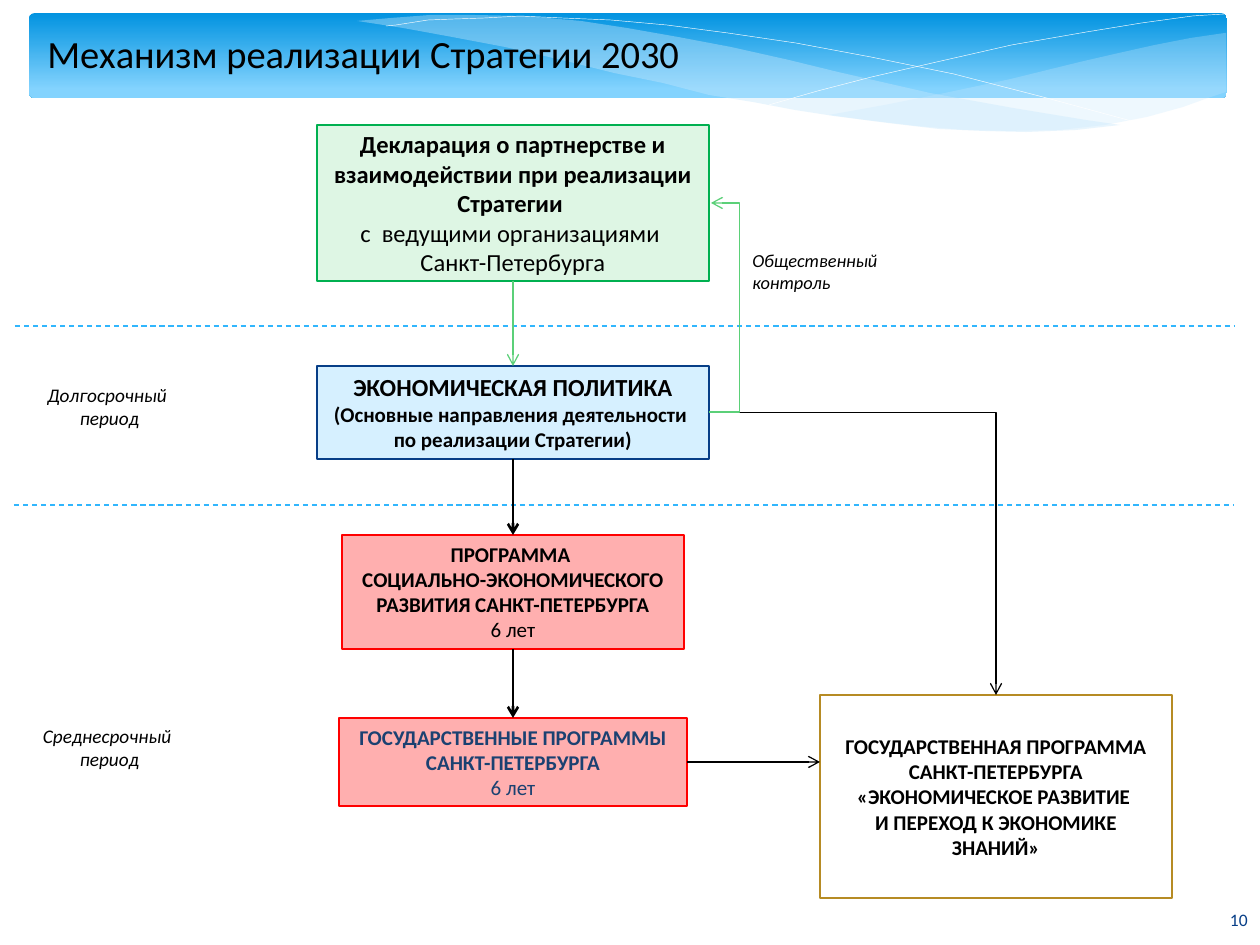
from lxml import etree
from pptx import Presentation
from pptx.dml.color import RGBColor
from pptx.enum.dml import MSO_LINE
from pptx.enum.shapes import MSO_CONNECTOR, MSO_SHAPE
from pptx.enum.text import MSO_ANCHOR, PP_ALIGN
from pptx.oxml.ns import qn
from pptx.util import Emu, Pt

SCALE = 914400 / 126
FONT = "Calibri"
RECT, ROUNDED = MSO_SHAPE.RECTANGLE, MSO_SHAPE.ROUNDED_RECTANGLE
STRAIGHT, ELBOW = MSO_CONNECTOR.STRAIGHT, MSO_CONNECTOR.ELBOW
LEFT, CENTER, RIGHT = PP_ALIGN.LEFT, PP_ALIGN.CENTER, PP_ALIGN.RIGHT
TOP, MIDDLE = MSO_ANCHOR.TOP, MSO_ANCHOR.MIDDLE
DASH = MSO_LINE.DASH
SIDE_TOP, SIDE_BOTTOM, SIDE_RIGHT = 0, 2, 3

BLACK = RGBColor(0x00, 0x00, 0x00)
WHITE = RGBColor(0xFF, 0xFF, 0xFF)
NAVY = RGBColor(0x07, 0x3E, 0x87)
STEEL = RGBColor(0x1B, 0x41, 0x71)
SKY = RGBColor(0x31, 0xB6, 0xFD)
PALE_BLUE = RGBColor(0xD6, 0xF0, 0xFF)
PINK = RGBColor(0xFF, 0xAF, 0xAF)
RED = RGBColor(0xFF, 0x00, 0x00)
GOLD = RGBColor(0xB6, 0x8B, 0x24)
MINT = RGBColor(0xDE, 0xF6, 0xE4)
GREEN = RGBColor(0x00, 0xB0, 0x50)
LIGHT_GREEN = RGBColor(0x5B, 0xD0, 0x78)
WAVE = RGBColor(0xC6, 0xE7, 0xFC)
BANNER_TOP = RGBColor(0x02, 0x93, 0xE0)
BANNER_BOTTOM = RGBColor(0x83, 0xD3, 0xFE)

RIGHT_WAVE = [
    (1225, 33), (1191, 38), (1155, 45), (1119, 53), (1080, 62), (1011, 79), (945, 93),
    (885, 105), (829, 115), (866, 120), (917, 126), (965, 130), (1008, 131), (1060, 130),
    (1105, 125), (1147, 117), (1183, 107), (1208, 98), (1226, 92), (1226, 33)]
LEFT_WAVE = [
    (1120, 125), (1086, 120), (1013, 108), (930, 93), (838, 72), (789, 60), (731, 47),
    (678, 37), (627, 28), (581, 21), (525, 16), (474, 15), (430, 15), (391, 18), (357, 21),
    (403, 28), (452, 37), (505, 47), (562, 60), (614, 73), (663, 83), (709, 95), (753, 102),
    (795, 110), (834, 116), (888, 123), (939, 129), (984, 131), (1026, 132), (1076, 130)]
FALLING_CURVE = [
    (386, 26), (396, 25), (428, 20), (454, 19), (484, 18), (520, 16), (563, 18), (611, 20),
    (667, 25), (728, 33), (796, 43), (871, 57), (954, 74), (1043, 97), (1139, 123)]
RISING_CURVE = [
    (769, 105), (818, 91), (872, 77), (937, 62), (1012, 45), (1087, 32), (1142, 23),
    (1193, 16), (1225, 14)]


def px(value):
    return Emu(round(value * SCALE))


def add_banner(slide):
    banner = slide.shapes.add_shape(ROUNDED, px(29), px(13), px(1198), px(85))
    banner.adjustments[0] = 0.07
    banner.shadow.inherit = False
    banner.line.fill.background()
    banner.fill.gradient()
    banner.fill.gradient_angle = 270
    for stop, position, color in zip(
            banner.fill.gradient_stops, (0, 0.9), (BANNER_TOP, BANNER_BOTTOM)):
        stop.position = position
        stop.color.rgb = color


def add_outline(slide, points, closed):
    builder = slide.shapes.build_freeform(*points[0], scale=SCALE)
    builder.add_line_segments(points[1:], close=closed)
    outline = builder.convert_to_shape()
    outline.shadow.inherit = False
    return outline


def add_wave(slide, points, opacity):
    wave = add_outline(slide, points, True)
    wave.line.fill.background()
    wave.fill.solid()
    wave.fill.fore_color.rgb = WAVE
    color = wave._element.spPr.find(qn("a:solidFill"))[0]
    etree.SubElement(color, qn("a:alpha")).set("val", str(opacity * 1000))


def add_curve(slide, points):
    curve = add_outline(slide, points, False)
    curve.fill.background()
    curve.line.color.rgb = WHITE
    curve.line.width = Pt(0.25)


def write(frame, paragraphs, color=BLACK, align=CENTER, anchor=TOP, wrap=True, italic=False):
    frame.word_wrap = wrap
    frame.vertical_anchor = anchor
    for index, runs in enumerate(paragraphs):
        paragraph = frame.add_paragraph() if index else frame.paragraphs[0]
        paragraph.alignment = align
        for text, size, bold in runs:
            for row, line in enumerate(text.split("\n")):
                if row:
                    paragraph.add_line_break()
                if line:
                    run = paragraph.add_run()
                    run.text = line
                    run.font.name = FONT
                    run.font.size = Pt(size)
                    run.font.bold = bold
                    run.font.italic = italic
                    run.font.color.rgb = color


def add_label(slide, bounds, text, size, **style):
    label = slide.shapes.add_textbox(*map(px, bounds))
    write(label.text_frame, [[(text, size, False)]], **style)


def add_box(slide, bounds, fill, border, paragraphs, **style):
    box = slide.shapes.add_shape(RECT, *map(px, bounds))
    box.shadow.inherit = False
    box.fill.solid()
    box.fill.fore_color.rgb = fill
    box.line.color.rgb = border
    box.line.width = Pt(1.25)
    write(box.text_frame, paragraphs, **style)
    return box


def add_link(slide, start, end, color, width=0.75, kind=STRAIGHT, arrow=True):
    link = slide.shapes.add_connector(kind, *map(px, start + end))
    link.line.color.rgb = color
    link.line.width = Pt(width)
    properties = link._element.spPr
    if arrow:
        etree.SubElement(properties.find(qn("a:ln")), qn("a:tailEnd")).set("type", "arrow")
    etree.SubElement(properties, qn("a:effectLst"))
    return link


def add_down_arrow(slide, upper, lower, color, width):
    arrow = add_link(slide, (513, 0), (513, 10), color, width)
    arrow.begin_connect(upper, SIDE_BOTTOM)
    arrow.end_connect(lower, SIDE_TOP)


def main():
    deck = Presentation()
    deck.slide_width, deck.slide_height = px(1260), px(945)
    slide = deck.slides.add_slide(deck.slide_layouts[6])

    add_banner(slide)
    add_wave(slide, RIGHT_WAVE, 29)
    add_wave(slide, LEFT_WAVE, 40)
    add_curve(slide, FALLING_CURVE)
    add_curve(slide, RISING_CURVE)
    add_label(slide, (1100, 895, 160, 50), "10", 10, color=NAVY, align=RIGHT, anchor=MIDDLE)
    add_label(slide, (35, 0, 1225, 106), "Механизм реализации Стратегии 2030", 22,
              align=LEFT, anchor=MIDDLE)

    policy = add_box(slide, (317, 366, 392, 93), PALE_BLUE, NAVY, [
        [("ЭКОНОМИЧЕСКАЯ ПОЛИТИКА", 14, True)],
        [("(Основные направления деятельности \nпо реализации Стратегии)", 12, True)],
    ], wrap=False)
    program = add_box(slide, (342, 535, 342, 114), PINK, RED, [
        [("ПРОГРАММА ", 12, True)],
        [("СОЦИАЛЬНО-ЭКОНОМИЧЕСКОГО", 12, True)],
        [("РАЗВИТИЯ САНКТ-ПЕТЕРБУРГА", 12, True)],
        [("6 лет", 12, False)],
    ], wrap=False)
    state_programs = add_box(slide, (339, 718, 348, 88), PINK, RED, [
        [("ГОСУДАРСТВЕННЫЕ ПРОГРАММЫ", 12, True)],
        [("САНКТ-ПЕТЕРБУРГА", 12, True)],
        [("6 лет", 12, False)],
    ], color=STEEL, wrap=False)
    knowledge = add_box(slide, (820, 695, 352, 203), WHITE, GOLD, [
        [("ГОСУДАРСТВЕННАЯ ПРОГРАММА САНКТ-ПЕТЕРБУРГА «ЭКОНОМИЧЕСКОЕ РАЗВИТИЕ \n"
          "И ПЕРЕХОД К ЭКОНОМИКЕ ЗНАНИЙ»", 12, True)],
    ], anchor=MIDDLE)
    declaration = add_box(slide, (317, 125, 392, 156), MINT, GREEN, [
        [("Декларация о партнерстве и взаимодействии при реализации Стратегии \n", 14, True),
         ("с  ведущими организациями \nСанкт-Петербурга", 14, False)],
    ], anchor=MIDDLE)

    add_label(slide, (15, 377, 189, 59), "Долгосрочный \nпериод", 11, italic=True)
    add_label(slide, (14, 718, 191, 59), "Среднесрочный \nпериод", 11, italic=True)
    for left, y in ((15, 326), (14, 505)):
        divider = add_link(slide, (left, y), (left + 1220, y), SKY, arrow=False)
        divider.line.dash_style = DASH

    add_down_arrow(slide, policy, program, BLACK, 1.5)
    add_down_arrow(slide, program, state_programs, BLACK, 1.5)
    add_down_arrow(slide, declaration, policy, LIGHT_GREEN, 0.75)
    to_knowledge = add_link(slide, (687, 762), (820, 762), BLACK)
    to_knowledge.begin_connect(state_programs, SIDE_RIGHT)

    policy_route = add_link(slide, (709, 412), (996, 695), BLACK, kind=ELBOW)
    policy_route._element.spPr.find(qn("a:prstGeom")).set("prst", "bentConnector2")
    policy_route.begin_connect(policy, SIDE_RIGHT)
    policy_route.end_connect(knowledge, SIDE_TOP)

    control = add_link(slide, (709, 412), (711, 203), LIGHT_GREEN, kind=ELBOW)
    bends = control._element.spPr.find(qn("a:prstGeom")).find(qn("a:avLst"))
    bend = etree.SubElement(bends, qn("a:gd"))
    bend.set("name", "adj1")
    bend.set("fmla", "val 1550000")
    add_label(slide, (740, 243, 151, 57), "Общественный\nконтроль", 10.5,
              align=LEFT, wrap=False, italic=True)

    deck.save("out.pptx")


if __name__ == "__main__":
    main()
